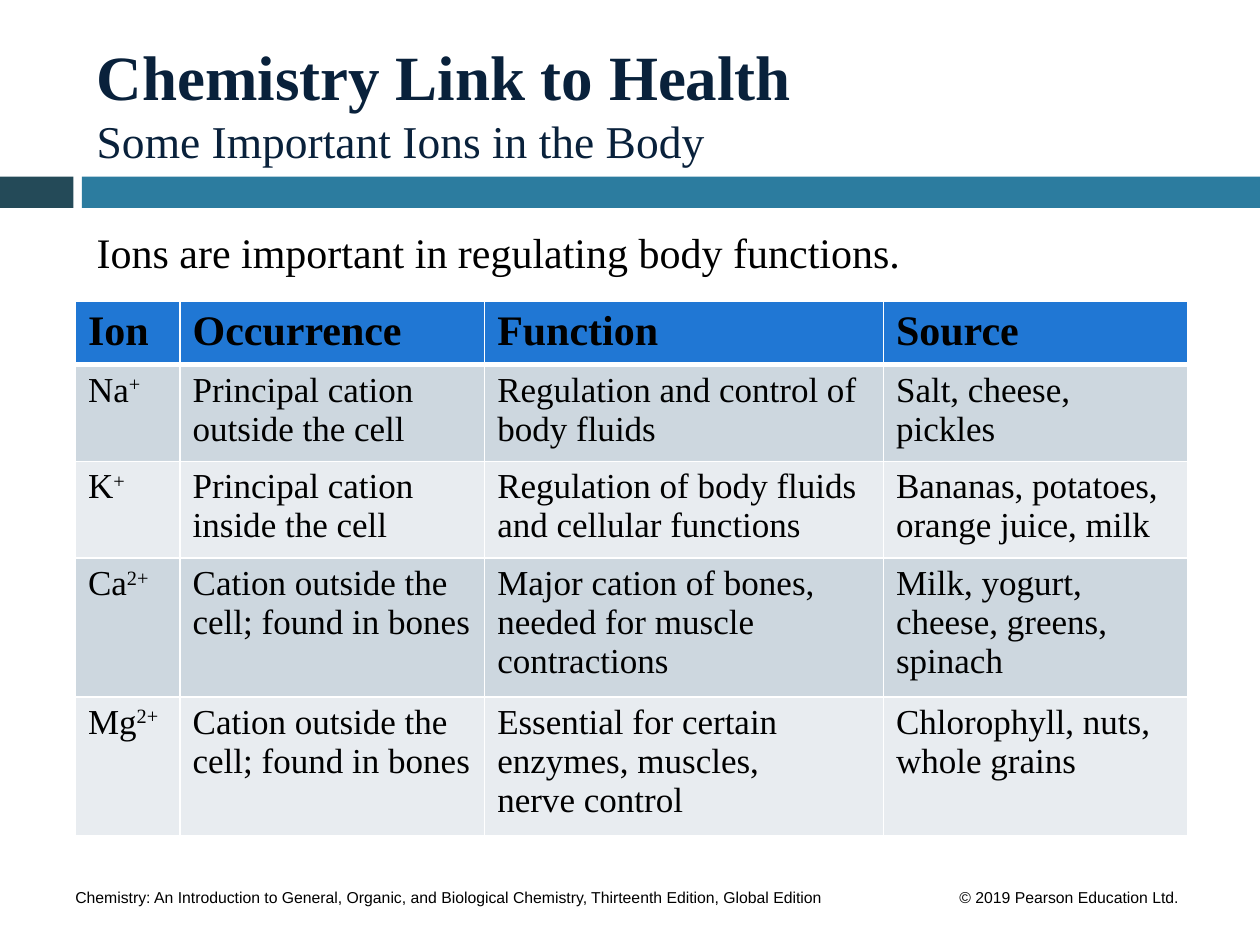
from dataclasses import dataclass

from lxml.etree import SubElement
from pptx import Presentation
from pptx.dml.color import RGBColor
from pptx.enum.shapes import MSO_SHAPE as Preset
from pptx.enum.text import MSO_ANCHOR as Anchor, PP_ALIGN as Align
from pptx.oxml.ns import qn
from pptx.slide import Slide
from pptx.table import _Cell as Cell
from pptx.util import Cm, Pt

COLORS = {
    "navy": "09213B", "slate": "244A58", "teal": "2C7C9F", "black": "000000",
    "white": "FFFFFF", "header": "2077D4", "odd": "CDD7DF", "even": "E8ECF0",
}
SERIF, SANS = "Times New Roman", "Arial"


@dataclass
class Frame:
    left: float
    top: float
    width: float
    height: float

    def lengths(self) -> list[Cm]:
        return [Cm(value) for value in (self.left, self.top, self.width, self.height)]


@dataclass
class Line:
    text: str
    size: int
    font: str = SERIF
    color: str = "black"
    bold: bool = False
    align: Align = Align.LEFT


@dataclass
class Ion:
    symbol: str
    charge: str
    occurrence: str
    function: str
    source: str


BARS = [
    (Frame(0, 3.56, 1.48, 0.63), "slate"),
    (Frame(1.65, 3.56, 23.75, 0.63), "teal"),
]
TEXTS = [
    (Frame(1.27, 17.78, 15.88, 0.63), Anchor.TOP, [
        Line("Chemistry: An Introduction to General, Organic, and Biological Chemistry, "
             "Thirteenth Edition, Global Edition", 9, SANS)]),
    (Frame(18.42, 17.78, 6.35, 0.63), Anchor.TOP, [
        Line("© 2019 Pearson Education Ltd. ", 9, SANS, align=Align.CENTER)]),
    (Frame(1.7, 0.79, 22.28, 2.54), Anchor.MIDDLE, [
        Line("Chemistry Link to Health", 36, color="navy", bold=True),
        Line("Some Important Ions in the Body", 26, color="navy")]),
    (Frame(1.7, 4.45, 22.02, 1.28), Anchor.TOP, [
        Line("Ions are important in regulating body functions.", 24)]),
]
TABLE = Frame(1.52, 6.08, 22.43, 10.75)
COLUMN_WIDTHS = [2.11, 6.14, 8.04, 6.14]
ROW_HEIGHTS = [1.27, 1.95, 1.95, 2.79, 2.79]
HEADINGS = ["Ion", "Occurrence", "Function", "Source"]
IONS = [
    Ion("Na", "+", "Principal cation outside the cell",
        "Regulation and control of body fluids", "Salt, cheese, pickles"),
    Ion("K", "+", "Principal cation inside the cell",
        "Regulation of body fluids and cellular functions",
        "Bananas, potatoes, orange juice, milk"),
    Ion("Ca", "2+", "Cation outside the cell; found in bones",
        "Major cation of bones, needed for muscle contractions",
        "Milk, yogurt, cheese, greens, spinach"),
    Ion("Mg", "2+", "Cation outside the cell; found in bones",
        "Essential for certain enzymes, muscles,\nnerve control",
        "Chlorophyll, nuts, whole grains"),
]


def rgb(name: str) -> RGBColor:
    return RGBColor.from_string(COLORS[name])


def style_paragraph(para, line: Line) -> None:
    para.alignment = line.align
    para.font.name = line.font
    para.font.size = Pt(line.size)
    para.font.bold = line.bold
    para.font.color.rgb = rgb(line.color)


def add_bar(page: Slide, frame: Frame, color: str) -> None:
    bar = page.shapes.add_shape(Preset.RECTANGLE, *frame.lengths())
    bar.shadow.inherit = False
    bar.fill.solid()
    bar.fill.fore_color.rgb = rgb(color)
    bar.line.fill.background()


def add_text(page: Slide, frame: Frame, anchor: Anchor, lines: list[Line]) -> None:
    text_frame = page.shapes.add_textbox(*frame.lengths()).text_frame
    text_frame.word_wrap = True
    text_frame.vertical_anchor = anchor
    text_frame.text = "\n".join(line.text for line in lines)
    for para, line in zip(text_frame.paragraphs, lines):
        style_paragraph(para, line)


def add_borders(cell: Cell, bottom: int, top: int) -> None:
    properties = cell._tc.get_or_add_tcPr()
    for side, width in (("L", 1), ("R", 1), ("T", top), ("B", bottom)):
        border = SubElement(properties, qn(f"a:ln{side}"), w=str(Pt(width)))
        fill = SubElement(border, qn("a:solidFill"))
        SubElement(fill, qn("a:srgbClr"), val=COLORS["white"])


def fill_cell(cell: Cell, text: str, row: int, charge: str = "") -> None:
    add_borders(cell, bottom=3 if row == 0 else 1, top=3 if row == 1 else 1)
    cell.fill.solid()
    cell.fill.fore_color.rgb = rgb("header" if row == 0 else "odd" if row % 2 else "even")
    cell.text = text
    if charge:
        span = cell.text_frame.paragraphs[0].add_run()
        span.text = charge
        span._r.get_or_add_rPr().set("baseline", "30000")
    for para in cell.text_frame.paragraphs:
        style_paragraph(para, Line(text, 20 if row else 24, bold=row == 0))


def add_ion_table(page: Slide) -> None:
    table = page.shapes.add_table(
        len(ROW_HEIGHTS), len(COLUMN_WIDTHS), *TABLE.lengths()).table
    table.first_row = False
    table.horz_banding = False
    for column, width in zip(table.columns, COLUMN_WIDTHS):
        column.width = Cm(width)
    for row, height in zip(table.rows, ROW_HEIGHTS):
        row.height = Cm(height)
    for column, heading in enumerate(HEADINGS):
        fill_cell(table.cell(0, column), heading, 0)
    for row, ion in enumerate(IONS, 1):
        fill_cell(table.cell(row, 0), ion.symbol, row, ion.charge)
        for column, text in enumerate((ion.occurrence, ion.function, ion.source), 1):
            fill_cell(table.cell(row, column), text, row)


def main() -> None:
    deck = Presentation()
    deck.slide_width, deck.slide_height = Cm(25.4), Cm(19.05)
    page = deck.slides.add_slide(deck.slide_layouts[6])
    for frame, color in BARS:
        add_bar(page, frame, color)
    for frame, anchor, lines in TEXTS:
        add_text(page, frame, anchor, lines)
    add_ion_table(page)
    deck.save("out.pptx")


if __name__ == "__main__":
    main()
